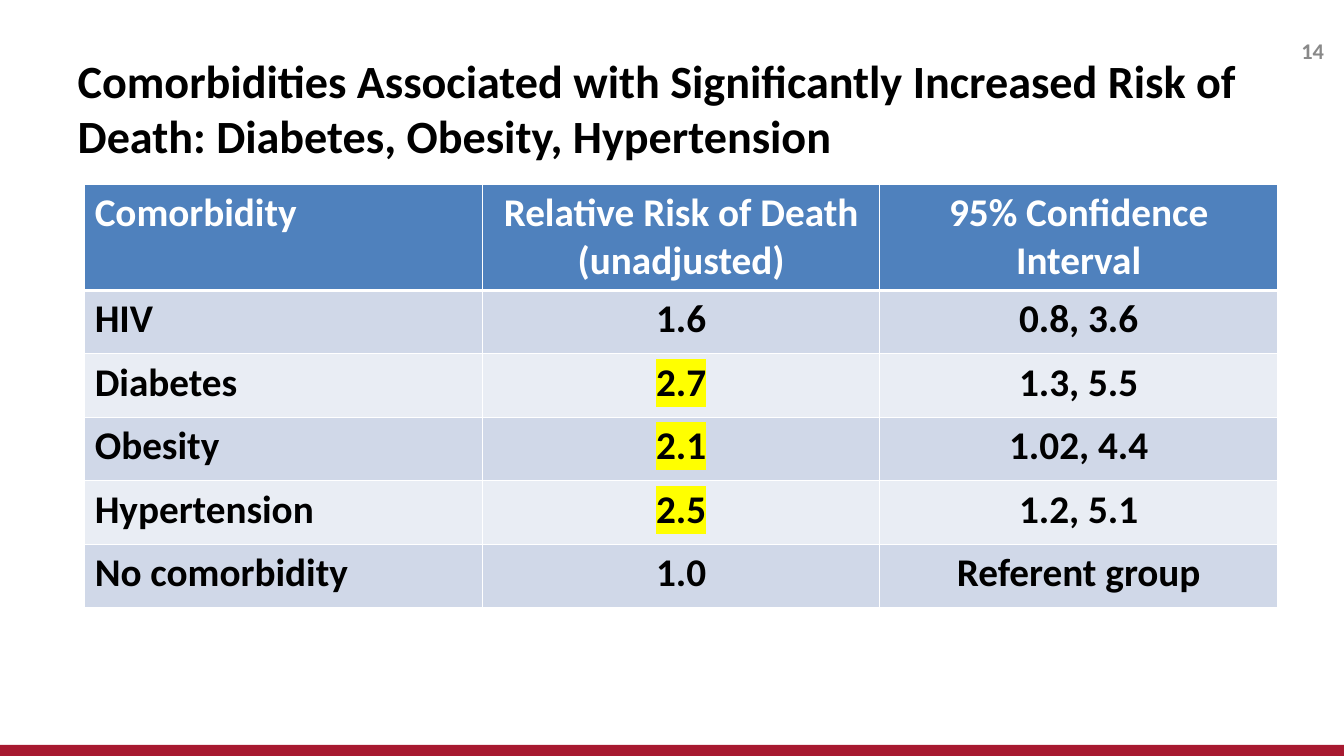
from lxml.etree import SubElement
from pptx import Presentation
from pptx.dml.color import RGBColor
from pptx.enum.shapes import MSO_SHAPE
from pptx.enum.text import MSO_ANCHOR, PP_ALIGN
from pptx.oxml import parse_xml
from pptx.oxml.ns import nsdecls, qn
from pptx.util import Inches, Pt

WHITE = RGBColor(0xFF, 0xFF, 0xFF)
BLACK = RGBColor(0x00, 0x00, 0x00)
GREY = RGBColor(0x89, 0x89, 0x89)
CRIMSON = RGBColor(0xA7, 0x19, 0x30)
BLUE = RGBColor(0x4F, 0x81, 0xBD)
BANDS = (RGBColor(0xD0, 0xD8, 0xE8), RGBColor(0xE9, 0xED, 0xF4))
YELLOW = RGBColor(0xFF, 0xFF, 0x00)

TITLE = ("Comorbidities Associated with Significantly Increased Risk of Death: "
         "Diabetes, Obesity, Hypertension")
ROWS = [
    ("Comorbidity", "Relative Risk of Death (unadjusted)", "95% Confidence Interval"),
    ("HIV", "1.6", "0.8, 3.6"),
    ("Diabetes", "2.7", "1.3, 5.5"),
    ("Obesity", "2.1", "1.02, 4.4"),
    ("Hypertension", "2.5", "1.2, 5.1"),
    ("No comorbidity", "1.0", "Referent group"),
]
SIGNIFICANT = {"2.7", "2.1", "2.5"}


class SlideBuilder:
    font = "Calibri"

    def __init__(self, slide):
        self.slide = slide

    def add_text(self, tf, text, size, color, align=PP_ALIGN.LEFT):
        p = tf.paragraphs[0]
        p.alignment = align
        r = p.add_run()
        r.text = text
        r.font.name = self.font
        r.font.size = Pt(size)
        r.font.bold = True
        r.font.color.rgb = color
        return r

    def place(self, sp, box):
        sp.left, sp.top, sp.width, sp.height = (Inches(v) for v in box)
        tf = sp.text_frame
        tf.word_wrap = True
        tf.vertical_anchor = MSO_ANCHOR.MIDDLE
        return tf

    def title(self, text, box):
        self.add_text(self.place(self.slide.shapes.title, box), text, 33, BLACK)

    def text(self, text, box, size, color, align):
        sp = self.slide.shapes.add_textbox(*(Inches(v) for v in box))
        self.add_text(self.place(sp, box), text, size, color, align)

    def bar(self, box, color):
        sp = self.slide.shapes.add_shape(MSO_SHAPE.RECTANGLE, *(Inches(v) for v in box))
        sp.shadow.inherit = False
        sp.fill.solid()
        sp.fill.fore_color.rgb = color
        sp.line.fill.background()

    def highlight(self, r, color):
        mark = parse_xml(f'<a:highlight {nsdecls("a")}><a:srgbClr val="{color}"/></a:highlight>')
        r._r.rPr.find(qn("a:solidFill")).addnext(mark)

    def borders(self, cell, top, bottom):
        tc_pr = cell._tc.get_or_add_tcPr()
        for i, (side, width) in enumerate(zip("LRTB", (1, 1, top, bottom))):
            ln = parse_xml(f'<a:ln{side} {nsdecls("a")} w="{Pt(width)}"/>')
            fill = SubElement(ln, qn("a:solidFill"))
            SubElement(fill, qn("a:srgbClr"), val=str(WHITE))
            tc_pr.insert(i, ln)

    def table(self, rows, box, header_height, row_height):
        frame = self.slide.shapes.add_table(len(rows), len(rows[0]), *(Inches(v) for v in box))
        table = frame.table
        for i, row in enumerate(rows):
            header = i == 0
            table.rows[i].height = Inches(header_height if header else row_height)
            for j, text in enumerate(row):
                cell = table.cell(i, j)
                cell.fill.solid()
                cell.fill.fore_color.rgb = BLUE if header else BANDS[(i - 1) % 2]
                self.borders(cell, 3 if i == 1 else 1, 3 if header else 1)
                r = self.add_text(cell.text_frame, text, 28, WHITE if header else BLACK,
                                  PP_ALIGN.CENTER if j else PP_ALIGN.LEFT)
                if text in SIGNIFICANT:
                    self.highlight(r, YELLOW)


def main():
    prs = Presentation()
    prs.slide_width = Inches(13.33)
    prs.slide_height = Inches(7.5)
    s = SlideBuilder(prs.slides.add_slide(prs.slide_layouts[5]))
    s.bar((0, 7.39, 13.33, 0.11), CRIMSON)
    s.table(ROWS, (0.84, 1.83, 11.83, 4.19), 1.04, 0.63)
    s.text("14", (12.67, 0.3, 0.56, 0.4), 16, GREY, PP_ALIGN.RIGHT)
    s.title(TITLE, (0.67, 0.63, 12.25, 0.87))
    prs.save("out.pptx")


if __name__ == "__main__":
    main()
